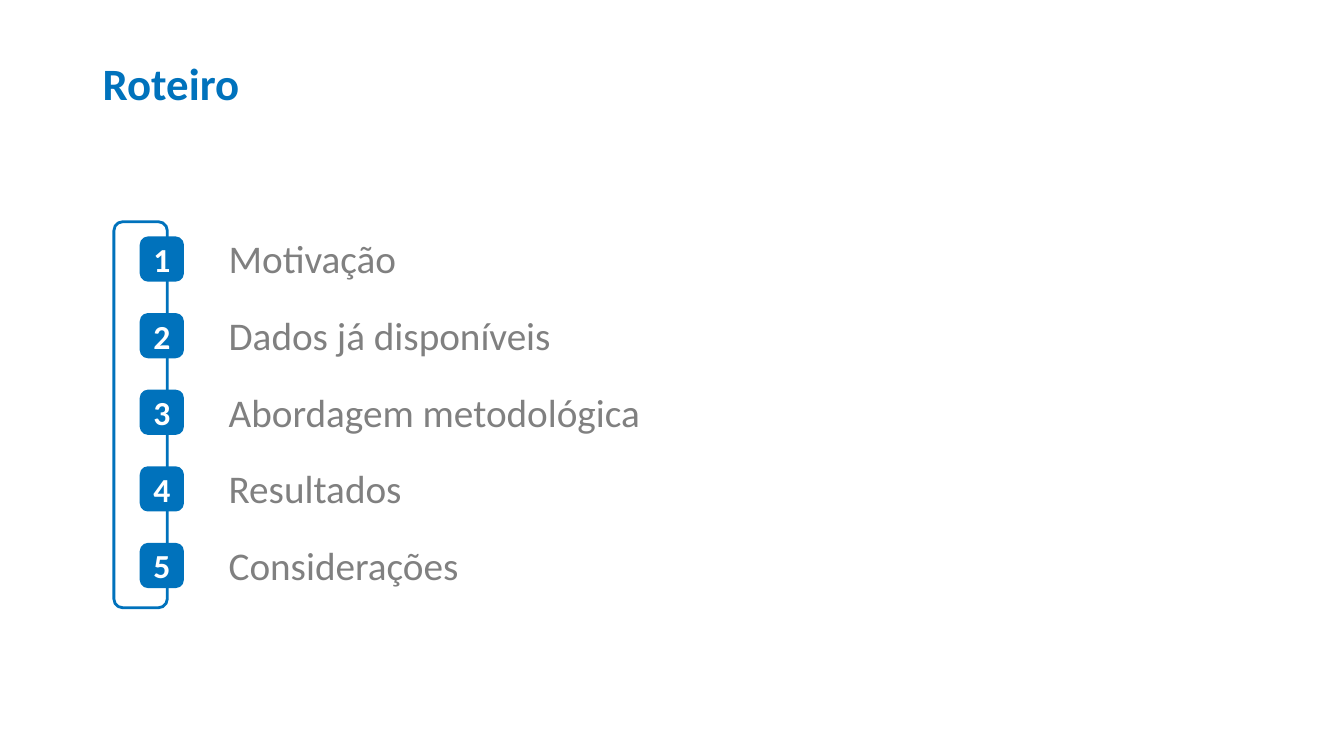
import pptx
import pptx.util
import pptx.dml.color
import pptx.enum.shapes
import pptx.enum.text

SCALE = 9144
COLORS = {"blue": "0072BC", "gray": "808080", "white": "FFFFFF"}
TOPICS = [
    "Motivação",
    "Dados já disponíveis",
    "Abordagem metodológica",
    "Resultados",
    "Considerações",
]


def color(name):
    return pptx.dml.color.RGBColor.from_string(COLORS[name])


class Board:
    font = "Calibri"
    line = 2
    corner = 0.167

    def __init__(self, slide):
        self.slide = slide

    def area(self, box):
        return [pptx.util.Emu(px * SCALE) for px in box]

    def letter(self, shape, text, size, tint, bold=False, middle=False):
        frame = shape.text_frame
        frame.word_wrap = True
        anchor = pptx.enum.text.MSO_ANCHOR
        frame.vertical_anchor = anchor.MIDDLE if middle else anchor.TOP
        para = frame.paragraphs[0]
        para.text = text
        font = para.runs[0].font
        font.name = self.font
        font.size = pptx.util.Pt(size)
        font.bold = bold
        font.color.rgb = color(tint)
        return para

    def label(self, box, text, size, tint, **style):
        shape = self.slide.shapes.add_textbox(*self.area(box))
        return self.letter(shape, text, size, tint, **style)

    def panel(self, box, fill):
        kind = pptx.enum.shapes.MSO_SHAPE.ROUNDED_RECTANGLE
        shape = self.slide.shapes.add_shape(kind, *self.area(box))
        shape.adjustments[0] = self.corner
        shape.shadow.inherit = False
        shape.fill.solid()
        shape.fill.fore_color.rgb = color(fill)
        shape.line.color.rgb = color("blue")
        shape.line.width = pptx.util.Pt(self.line)
        return shape

    def badge(self, box, text):
        shape = self.panel(box, "blue")
        para = self.letter(shape, text, 24, "white", bold=True, middle=True)
        para.alignment = pptx.enum.text.PP_ALIGN.CENTER


def main():
    deck = pptx.Presentation()
    deck.slide_width = pptx.util.Emu(1333 * SCALE)
    deck.slide_height = pptx.util.Emu(750 * SCALE)
    board = Board(deck.slides.add_slide(deck.slide_layouts[6]))

    title = board.label(
        (92, 13, 1054, 145), "Roteiro", 32, "blue", bold=True, middle=True
    )
    title.line_spacing = 0.9

    board.panel((113, 220, 53, 383), "white")
    for index, topic in enumerate(TOPICS):
        top = 236 + 76 * index
        board.badge((140, top, 41, 42), str(index + 1))
        board.label((217, top - 8, 573, 57), topic, 28, "gray")

    deck.save("out.pptx")


if __name__ == "__main__":
    main()
